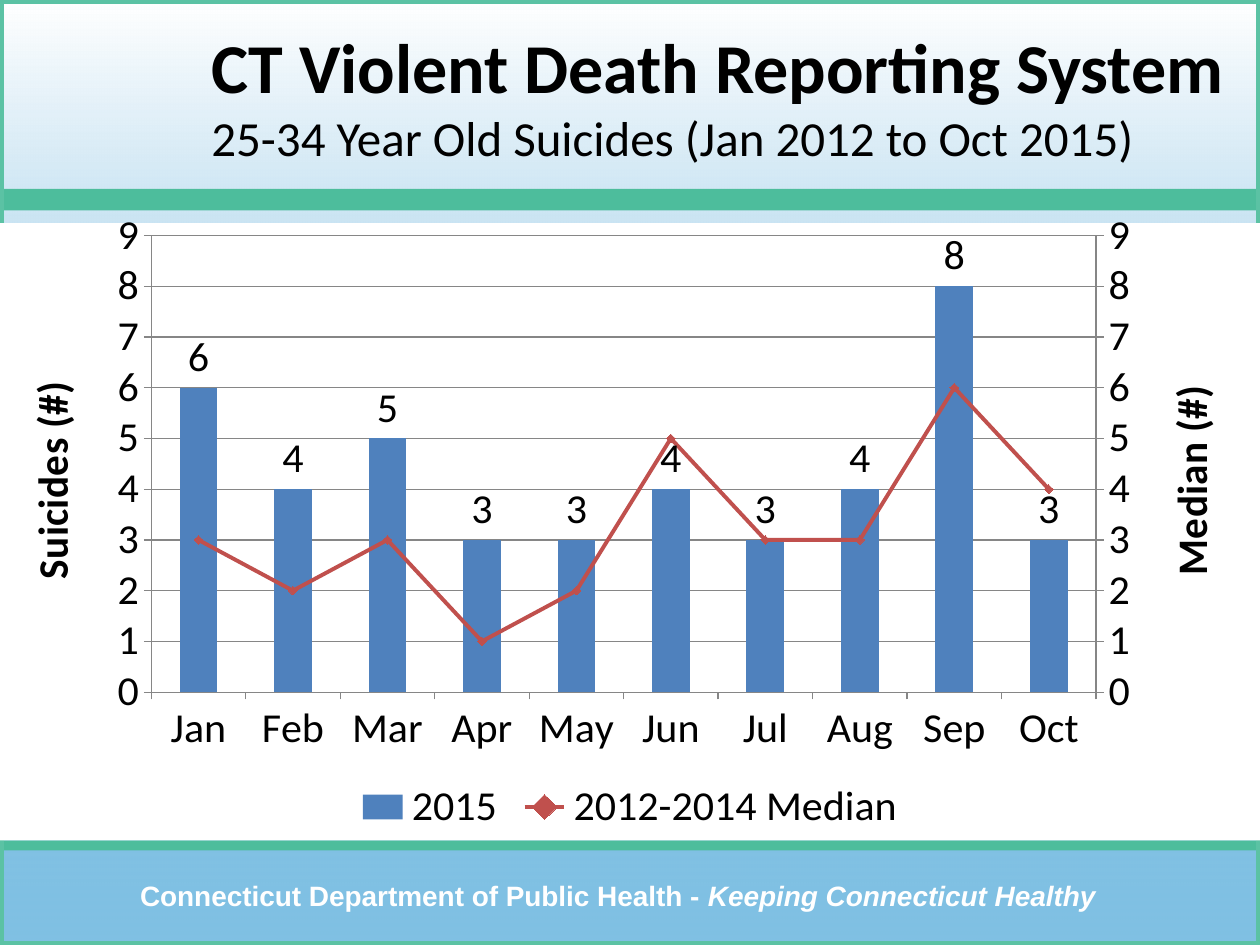
from copy import deepcopy

from lxml.etree import SubElement
from pptx import Presentation
from pptx.chart.data import CategoryChartData
from pptx.dml.color import RGBColor
from pptx.enum.chart import (XL_CHART_TYPE, XL_LABEL_POSITION, XL_LEGEND_POSITION,
                             XL_MARKER_STYLE, XL_TICK_MARK)
from pptx.enum.shapes import MSO_SHAPE
from pptx.enum.text import MSO_ANCHOR, PP_ALIGN
from pptx.oxml import parse_xml
from pptx.oxml.ns import nsdecls, qn
from pptx.util import Inches, Pt

COLORS = {"blue": "0082C8", "green": "4DBD9C", "frame": "5BC2A4", "white": "FFFFFF",
          "black": "000000", "bar": "4F81BD", "median": "C0504D", "grid": "868686"}
MONTHS = ["Jan", "Feb", "Mar", "Apr", "May", "Jun", "Jul", "Aug", "Sep", "Oct"]
SUICIDES = [6, 4, 5, 3, 3, 4, 3, 4, 8, 3]
MEDIANS = [3, 2, 3, 1, 2, 5, 3, 3, 6, 4]
PLOT_LAYOUT = {"x": 0.12, "y": 0.02, "w": 0.75, "h": 0.74}


def rgb(name):
    return RGBColor.from_string(COLORS[name])


def set_values(target, values):
    for name, value in values.items():
        setattr(target, name, value)


class SlideBuilder:
    """Hold the slide and its style, and add each kind of element."""

    def __init__(self, slide):
        self.slide = slide
        self.font = {"name": "Calibri", "size": Pt(24)}

    def rectangle(self, box, fill=None, line=None, width=4.5):
        shape = self.slide.shapes.add_shape(MSO_SHAPE.RECTANGLE, *map(Inches, box))
        shape.shadow.inherit = False
        if fill:
            shape.fill.solid()
            shape.fill.fore_color.rgb = rgb(fill)
        else:
            shape.fill.background()
        if line:
            shape.line.color.rgb = rgb(line)
            shape.line.width = Pt(width)
        else:
            shape.line.fill.background()
        return shape

    def gradient(self, box, start, end, start_alpha):
        fill = self.rectangle(box).fill
        fill.gradient()
        fill.gradient_angle = 90
        for stop, color, position in zip(fill.gradient_stops, (start, end), (0, 1)):
            stop.color.rgb = rgb(color)
            stop.position = position
        first_color = fill.gradient_stops[0].color
        first_color.rgb = rgb(start)
        color_element = self.slide.shapes[-1]._element.spPr.find(".//" + qn("a:srgbClr"))
        SubElement(color_element, qn("a:alpha"), val=str(start_alpha * 1000))

    def text(self, box, runs, color, align, line_breaks=False):
        frame = self.slide.shapes.add_textbox(*map(Inches, box)).text_frame
        set_values(frame, {"word_wrap": True, "vertical_anchor": MSO_ANCHOR.MIDDLE})
        paragraph = frame.paragraphs[0]
        paragraph.alignment = align
        for index, (words, style) in enumerate(runs):
            if index and line_breaks:
                paragraph.add_line_break()
            run = paragraph.add_run()
            run.text = words
            set_values(run.font, {**self.font, **style})
            run.font.color.rgb = rgb(color)

    def axis_title(self, axis, words):
        frame = axis.axis_title.text_frame
        frame.text = words
        set_values(frame.paragraphs[0].runs[0].font, {**self.font, "bold": True})
        body = axis._element.find(".//" + qn("a:bodyPr"))
        body.set("rot", "-5400000")
        body.set("vert", "horz")

    def combined_chart(self, box, categories, bars, line, titles):
        data = CategoryChartData()
        data.categories = categories
        for name, values in (bars, line):
            data.add_series(name, values)
        chart = self.slide.shapes.add_chart(
            XL_CHART_TYPE.COLUMN_CLUSTERED, *map(Inches, box), data).chart
        set_values(chart.font, self.font)
        chart.font.color.rgb = rgb("black")
        set_values(chart, {"has_title": False, "has_legend": True})
        set_values(chart.legend, {"position": XL_LEGEND_POSITION.BOTTOM,
                                  "include_in_layout": False})
        self.style_axes(chart, titles[0])
        self.move_line_series(chart, titles[1])
        self.style_series(chart)
        self.place_plot(chart)

    def style_axes(self, chart, title):
        set_values(chart.value_axis, {"minimum_scale": 0, "maximum_scale": 9, "major_unit": 1,
                                      "has_major_gridlines": True})
        for axis in (chart.category_axis, chart.value_axis):
            set_values(axis, {"major_tick_mark": XL_TICK_MARK.OUTSIDE,
                              "minor_tick_mark": XL_TICK_MARK.NONE})
            axis.format.line.color.rgb = rgb("grid")
        chart.value_axis.major_gridlines.format.line.color.rgb = rgb("grid")
        self.axis_title(chart.value_axis, title)

    def move_line_series(self, chart, title):
        bar_plot = chart.plots[0]._element
        series = bar_plot.findall(qn("c:ser"))[1]
        line_plot = parse_xml(
            f'<c:lineChart {nsdecls("c")}><c:grouping val="standard"/><c:varyColors val="0"/>'
            '<c:marker val="1"/><c:axId val="5001"/><c:axId val="5002"/></c:lineChart>')
        for invert in series.findall(qn("c:invertIfNegative")):
            series.remove(invert)
        line_plot.insert(2, series)
        bar_plot.addnext(line_plot)

        category = deepcopy(chart.category_axis._element)
        value = deepcopy(chart.value_axis._element)
        for axis, own, other in ((category, "5001", "5002"), (value, "5002", "5001")):
            axis.find(qn("c:axId")).set("val", own)
            axis.find(qn("c:crossAx")).set("val", other)
        category.find(qn("c:delete")).set("val", "1")
        value.remove(value.find(qn("c:majorGridlines")))
        value.find(qn("c:axPos")).set("val", "r")
        value.find(qn("c:crosses")).set("val", "max")
        value.find(".//" + qn("a:t")).text = title
        chart.value_axis._element.addnext(value)
        value.addnext(category)

    def style_series(self, chart):
        bar_plot, line_plot = chart.plots
        set_values(bar_plot, {"gap_width": 150, "vary_by_categories": False})
        bars, median = bar_plot.series[0], line_plot.series[0]
        bars.format.fill.solid()
        bars.format.fill.fore_color.rgb = rgb("bar")
        set_values(bars.data_labels, {"show_value": True,
                                      "position": XL_LABEL_POSITION.OUTSIDE_END})
        median.smooth = False
        median.format.line.color.rgb = rgb("median")
        median.format.line.width = Pt(2.25)
        set_values(median.marker, {"style": XL_MARKER_STYLE.DIAMOND, "size": 5})
        median.marker.format.fill.solid()
        median.marker.format.fill.fore_color.rgb = rgb("median")
        median.marker.format.line.color.rgb = rgb("median")

    def place_plot(self, chart):
        plot_area = chart._chartSpace.find(".//" + qn("c:plotArea"))
        for old_layout in plot_area.findall(qn("c:layout")):
            plot_area.remove(old_layout)
        sizes = "".join(f'<c:{key} val="{value}"/>' for key, value in PLOT_LAYOUT.items())
        plot_area.insert(0, parse_xml(
            f'<c:layout {nsdecls("c")}><c:manualLayout><c:layoutTarget val="inner"/>'
            f'<c:xMode val="edge"/><c:yMode val="edge"/>{sizes}</c:manualLayout></c:layout>'))
        chart._chartSpace.find(qn("c:chart")).addnext(parse_xml(
            f'<c:spPr {nsdecls("c", "a")}><a:solidFill><a:srgbClr val="{COLORS["white"]}"/>'
            '</a:solidFill><a:ln><a:noFill/></a:ln></c:spPr>'))


def main():
    presentation = Presentation()
    set_values(presentation, {"slide_width": Inches(10), "slide_height": Inches(7.5)})
    builder = SlideBuilder(presentation.slides.add_slide(presentation.slide_layouts[6]))
    full_slide = (0, 0, 10, 7.5)
    builder.gradient(full_slide, "blue", "white", 50)
    builder.rectangle((0, 6.67, 10, 0.08), "green")
    footer = {"name": "Arial", "size": Pt(16), "bold": True}
    builder.text((0.49, 6.92, 8.83, 0.37),
                 [("Connecticut Department of Public Health - ", footer),
                  ("Keeping Connecticut Healthy", {**footer, "italic": True})],
                 "white", PP_ALIGN.CENTER)
    builder.rectangle((0, 1.5, 10, 0.17), "green")
    builder.rectangle(full_slide, line="frame")
    builder.text((1.58, 0, 8.33, 1.5),
                 [("CT Violent Death Reporting System", {"size": Pt(40), "bold": True}),
                  ("25-34 Year Old Suicides (Jan 2012 to Oct 2015)", {"size": Pt(28)})],
                 "black", PP_ALIGN.LEFT, line_breaks=True)
    builder.combined_chart((0, 1.67, 10, 5), MONTHS, ("2015", SUICIDES),
                           ("2012-2014 Median", MEDIANS), ("Suicides (#)", "Median (#)"))
    presentation.save("out.pptx")


if __name__ == "__main__":
    main()
